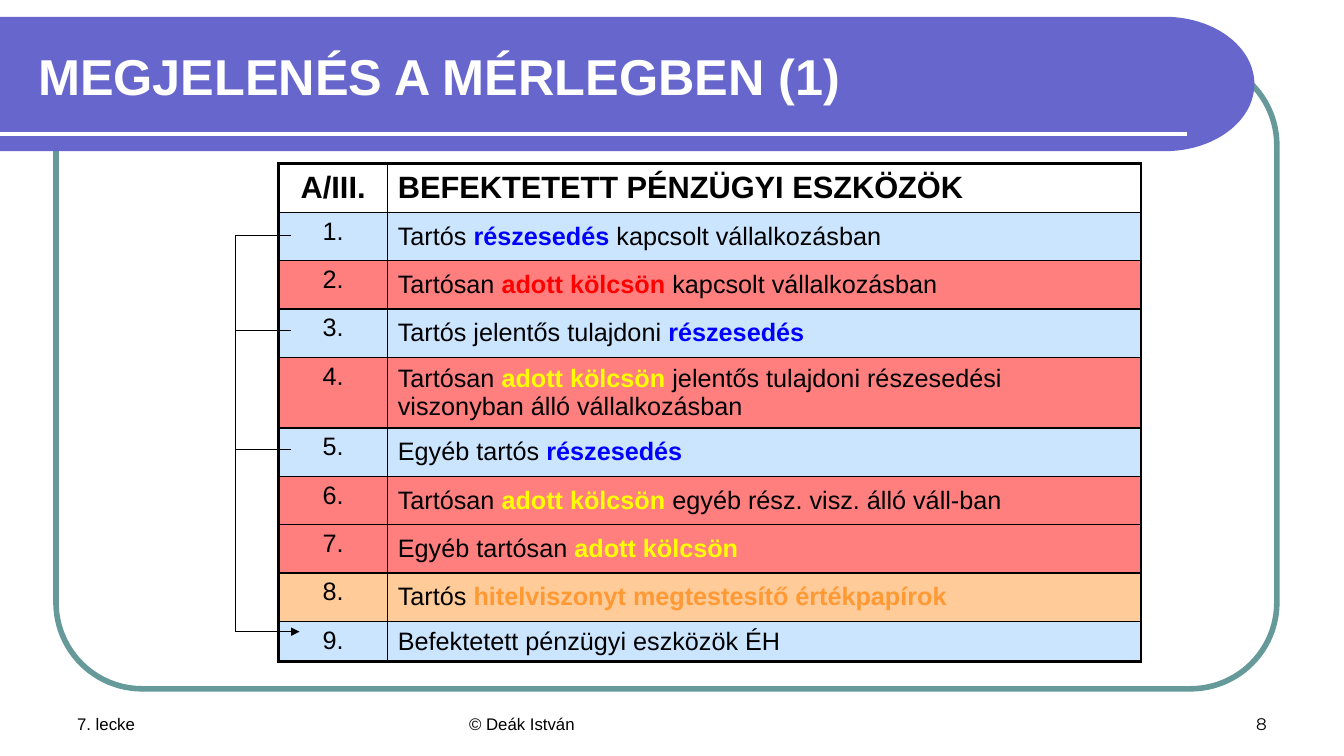
import math

import lxml.etree
import pptx
import pptx.dml.color
import pptx.enum.shapes
import pptx.enum.text
import pptx.oxml
import pptx.oxml.ns
import pptx.util

COLUMNS, ROWS = 48, 45
WIDTH, HEIGHT = pptx.util.Inches(13.33), pptx.util.Inches(7.5)
ALIGN = pptx.enum.text.PP_ALIGN
ANCHOR = pptx.enum.text.MSO_ANCHOR
COLORS = {
    "black": "000000", "white": "FFFFFF", "violet": "6666CC", "teal": "669999",
    "sky": "99CCFF", "red": "FF0000", "orange": "FF9933",
    "blue": "0000FF", "yellow": "FFFF00",
}
TITLE = {"size": 36, "bold": True, "color": "white"}
HEADER = {"size": 22, "bold": True}
BODY = {"size": 18, "bold": False}
FOOTER = {"size": 12}

HEADINGS = ("A/III.", "BEFEKTETETT PÉNZÜGYI ESZKÖZÖK")
ITEMS = [
    ("sky", "Tartós ", "részesedés", "blue", " kapcsolt vállalkozásban"),
    ("red", "Tartósan ", "adott kölcsön ", "red", "kapcsolt vállalkozásban"),
    ("sky", "Tartós jelentős tulajdoni ", "részesedés", "blue", ""),
    ("red", "Tartósan ", "adott kölcsön ", "yellow",
     "jelentős tulajdoni részesedési viszonyban álló vállalkozásban"),
    ("sky", "Egyéb tartós ", "részesedés", "blue", ""),
    ("red", "Tartósan ", "adott kölcsön ", "yellow", "egyéb rész. visz. álló váll-ban"),
    ("red", "Egyéb tartósan ", "adott kölcsön", "yellow", ""),
    ("orange", "Tartós ", "hitelviszonyt megtestesítő értékpapírok", "orange", ""),
    ("sky", "Befektetett pénzügyi eszközök ÉH", "", "black", ""),
]


def across(n):
    """Return the length of n grid columns."""
    return round(n * WIDTH / COLUMNS)


def down(n):
    """Return the length of n grid rows."""
    return round(n * HEIGHT / ROWS)


def place(box):
    """Turn a grid box into left, top, width and height."""
    x, y, w, h = box
    return across(x), down(y), across(w), down(h)


def rgb(name):
    """Look up a named colour."""
    return pptx.dml.color.RGBColor.from_string(COLORS[name])


def add_run(p, text, size, color="black", name="Arial", bold=False):
    """Append a formatted run to a paragraph."""
    r = p.add_run()
    r.text = text
    for key, value in {"size": pptx.util.Pt(size), "name": name, "bold": bold}.items():
        setattr(r.font, key, value)
    r.font.color.rgb = rgb(color)


def add_line(shapes, start, end, color="black", width=0.75, arrow=False):
    """Draw a straight line between two grid points."""
    kind = pptx.enum.shapes.MSO_CONNECTOR.STRAIGHT
    c = shapes.add_connector(kind, across(start[0]), down(start[1]),
                             across(end[0]), down(end[1]))
    c.line.color.rgb = rgb(color)
    c.line.width = pptx.util.Pt(width)
    if arrow:
        lxml.etree.SubElement(c.line._get_or_add_ln(), pptx.oxml.ns.qn("a:tailEnd"),
                              type="triangle")
    lxml.etree.SubElement(c._element.spPr, pptx.oxml.ns.qn("a:effectLst"))


def add_frame(shapes, box):
    """Draw the rounded outline around the content."""
    sp = shapes.add_shape(pptx.enum.shapes.MSO_SHAPE.ROUNDED_RECTANGLE, *place(box))
    sp.adjustments[0] = 0.137
    sp.shadow.inherit = False
    sp.fill.background()
    sp.line.color.rgb = rgb("teal")
    sp.line.width = pptx.util.Pt(4)


def add_band(shapes, box):
    """Draw the title band with its rounded end and white rule."""
    x, y, w, h = box
    bend = 3.2
    angles = [math.pi * (i / 48 - 0.5) for i in range(49)]
    points = [(across(x + w - bend + bend * math.cos(a)),
               down(y + h / 2 * (1 + math.sin(a)))) for a in angles]
    builder = shapes.build_freeform(across(x), down(y))
    builder.add_line_segments(points + [(across(x), down(y + h))], close=True)
    sp = builder.convert_to_shape()
    sp.shadow.inherit = False
    sp.fill.solid()
    sp.fill.fore_color.rgb = rgb("violet")
    sp.line.fill.background()
    rule = y + h * 7 / 8
    add_line(shapes, (x, rule), (x + w - 2.4, rule), "white", 3)


def add_title(shapes, box, text):
    """Move and format the title placeholder."""
    sp = shapes.title
    sp.left, sp.top, sp.width, sp.height = place(box)
    tf = sp.text_frame
    tf.vertical_anchor = ANCHOR.MIDDLE
    tf.paragraphs[0].alignment = ALIGN.LEFT
    add_run(tf.paragraphs[0], text, **TITLE)


def add_footer(shapes, box):
    """Set the lesson, author and page number along the bottom."""
    x, y, w, h = box
    side, middle = 11.2, 15.2
    parts = [
        (x, side, "7. lecke", ALIGN.LEFT, "Arial"),
        (x + (w - middle) / 2, middle, "© Deák István", ALIGN.LEFT, "Arial"),
        (x + w - side, side, "8", ALIGN.RIGHT, "Montserrat"),
    ]
    for left, width, text, align, font in parts:
        tf = shapes.add_textbox(*place((left, y, width, h))).text_frame
        tf.word_wrap = True
        tf.vertical_anchor = ANCHOR.BOTTOM
        tf.paragraphs[0].alignment = align
        add_run(tf.paragraphs[0], text, name=font, **FOOTER)


def format_cell(cell, fill, outer):
    """Fill a cell and draw its borders, thicker on the outer sides."""
    tc_pr = cell._tc.get_or_add_tcPr()
    cell.fill.background()
    if fill:
        cell.fill.solid()
        cell.fill.fore_color.rgb = rgb(fill)
        lxml.etree.SubElement(tc_pr.find(".//" + pptx.oxml.ns.qn("a:srgbClr")),
                              pptx.oxml.ns.qn("a:alpha"), val="50000")
    for i, side in enumerate("LRTB"):
        width = pptx.util.Pt(2.25 if side in outer else 1)
        tc_pr.insert(i, pptx.oxml.parse_xml(
            f'<a:ln{side} {pptx.oxml.ns.nsdecls("a")} w="{width}"><a:solidFill>'
            f'<a:srgbClr val="{COLORS["black"]}"/></a:solidFill></a:ln{side}>'))


def add_balance_table(shapes, box):
    """Build the table of financial assets."""
    x, y, w, h = box
    number_width, tall, last = 3.9, 3.94, 2.32
    table = shapes.add_table(len(ITEMS) + 1, 2, *place(box)).table
    for flag in ("first_row", "horz_banding"):
        setattr(table, flag, False)
    table.columns[0].width = across(number_width)
    table.columns[1].width = across(w - number_width)
    regular = (h - tall - last) / (len(ITEMS) - 1)
    special = {4: tall, len(ITEMS): last}
    for i, row in enumerate(table.rows):
        row.height = down(special.get(i, regular))
        number, label = row.cells
        edge = {0: "T", len(ITEMS): "B"}.get(i, "")
        fill = ITEMS[i - 1][0] if i else None
        format_cell(number, fill, "L" + edge)
        format_cell(label, fill, "R" + edge)
        number.vertical_anchor = ANCHOR.TOP if i else ANCHOR.MIDDLE
        label.vertical_anchor = ANCHOR.MIDDLE
        p, q = (cell.text_frame.paragraphs[0] for cell in (number, label))
        p.alignment = ALIGN.CENTER
        if i == 0:
            add_run(p, HEADINGS[0], **HEADER)
            add_run(q, HEADINGS[1], **HEADER)
            continue
        add_run(p, f"{i}.", **BODY)
        _, before, key, color, after = ITEMS[i - 1]
        for text, style in ((before, {}), (key, {"color": color, "bold": True}), (after, {})):
            if text:
                add_run(q, text, **{**BODY, **style})


def add_bracket(shapes, box):
    """Link the shareholding rows to the last row with an arrow."""
    x, y, w, h = box
    for share in (0, 0.24, 0.54):
        add_line(shapes, (x + w, y + h * share), (x, y + h * share))
    add_line(shapes, (x, y), (x, y + h))
    add_line(shapes, (x, y + h), (x + w + 0.3, y + h), arrow=True)


def main():
    """Build and save the slide."""
    prs = pptx.Presentation()
    prs.slide_width, prs.slide_height = WIDTH, HEIGHT
    shapes = prs.slides.add_slide(prs.slide_layouts[5]).shapes
    add_frame(shapes, (2, 3.5, 43.6, 37.5))
    add_band(shapes, (0, 1, 44.8, 8))
    title = shapes.title._element
    title.getparent().append(title)
    add_title(shapes, (1, 1.5, 42.1, 6), "MEGJELENÉS A MÉRLEGBEN (1)")
    add_footer(shapes, (2.4, 41, 43.2, 3))
    add_balance_table(shapes, (9.95, 9.75, 30.8, 29.3))
    add_bracket(shapes, (8.42, 14, 1.98, 23.6))
    prs.save("out.pptx")


if __name__ == "__main__":
    main()
